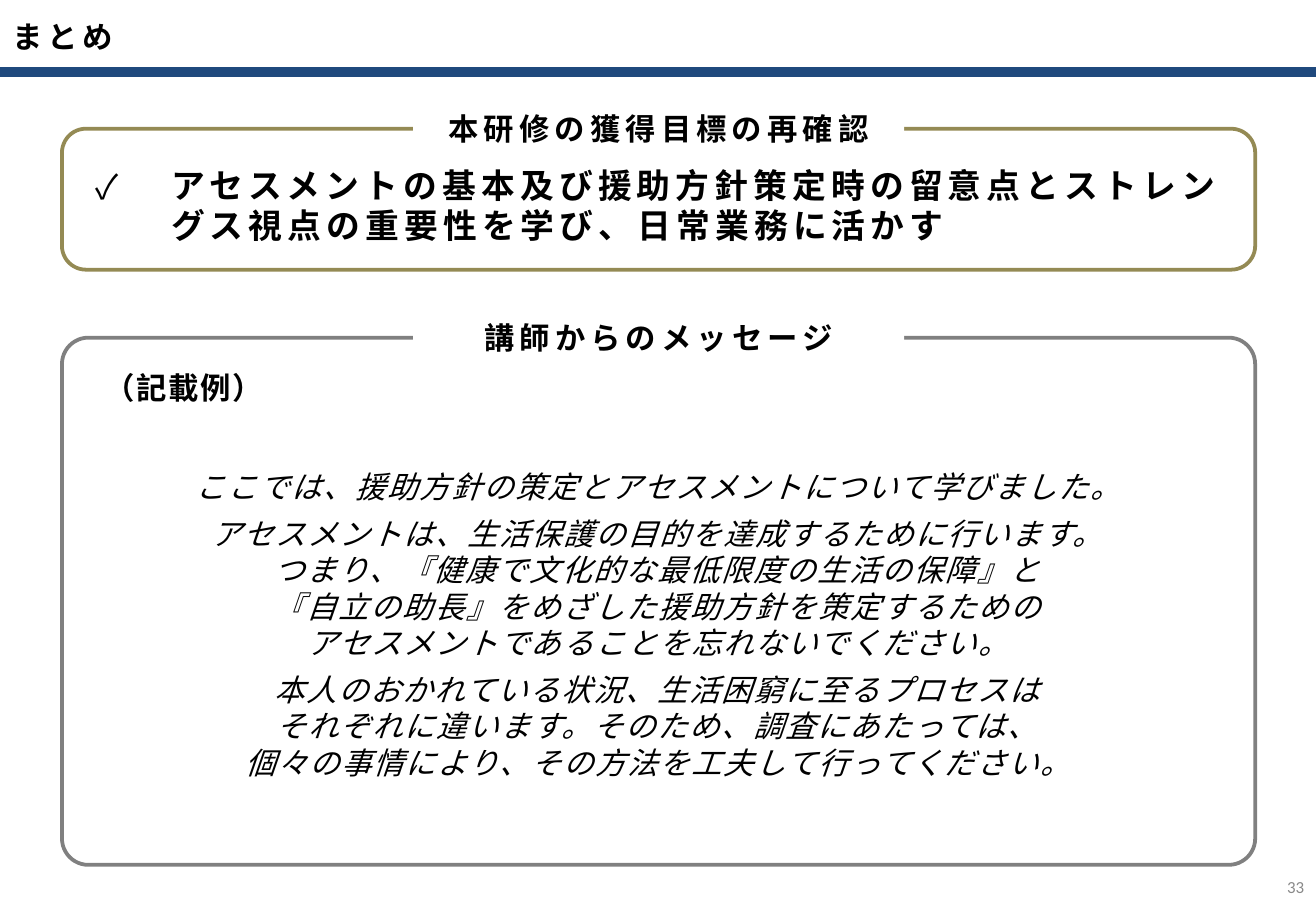
from lxml.etree import SubElement
from pptx import Presentation
from pptx.dml.color import RGBColor
from pptx.enum.shapes import MSO_CONNECTOR, MSO_SHAPE
from pptx.enum.text import MSO_ANCHOR, MSO_AUTO_SIZE, PP_ALIGN
from pptx.oxml.ns import qn
from pptx.util import Inches, Pt

WIDTH, HEIGHT = Inches(10.83), Inches(7.5)
FONT = "Noto Sans CJK JP"

BLACK = RGBColor(0x00, 0x00, 0x00)
WHITE = RGBColor(0xFF, 0xFF, 0xFF)
NAVY = RGBColor(0x1F, 0x49, 0x7D)
OLIVE = RGBColor(0x94, 0x8A, 0x54)
GRAY = RGBColor(0x80, 0x80, 0x80)
PAGE_GRAY = RGBColor(0x89, 0x89, 0x89)

# Panels, in percent of the slide
PANEL_X, PANEL_W = 4.71, 90.67
GOAL_Y, GOAL_H = 14.13, 15.47
MESSAGE_Y, MESSAGE_H = 37.07, 57.87
LABEL_X, LABEL_W, LABEL_H = 31.4, 37.3, 5.33

GOAL = "アセスメントの基本及び援助方針策定時の留意点とストレングス視点の重要性を学び、日常業務に活かす"
MESSAGE = [
    "ここでは、援助方針の策定とアセスメントについて学びました。",
    "アセスメントは、生活保護の目的を達成するために行います。\n"
    "つまり、『健康で文化的な最低限度の生活の保障』と\n"
    "『自立の助長』をめざした援助方針を策定するための\n"
    "アセスメントであることを忘れないでください。",
    "本人のおかれている状況、生活困窮に至るプロセスは\n"
    "それぞれに違います。そのため、調査にあたっては、\n"
    "個々の事情により、その方法を工夫して行ってください。",
]


def area(x, y, w, h):
    """Turn percentages of the slide into lengths."""
    return (int(WIDTH * x / 100), int(HEIGHT * y / 100),
            int(WIDTH * w / 100), int(HEIGHT * h / 100))


def add_bullet(p, char, indent):
    pPr = p._p.get_or_add_pPr()
    pPr.set("marL", str(indent))
    pPr.set("indent", str(-indent))
    SubElement(pPr, qn("a:buFont")).set("typeface", FONT)
    SubElement(pPr, qn("a:buChar")).set("char", char)


def write(sp, paragraphs, size=18, font=FONT, color=BLACK, bold=False,
          italic=False, spacing=3, align=PP_ALIGN.CENTER,
          anchor=MSO_ANCHOR.MIDDLE, leading=1.2, before=0, bullet=None):
    """Fill a shape with paragraphs of one format."""
    tf = sp.text_frame
    tf.word_wrap = True
    tf.auto_size = MSO_AUTO_SIZE.NONE
    tf.vertical_anchor = anchor
    for i, text in enumerate(paragraphs):
        p = tf.add_paragraph() if i else tf.paragraphs[0]
        p.alignment = align
        p.line_spacing = Pt(size * leading)
        p.space_before = Pt(before)
        if bullet:
            add_bullet(p, bullet, Inches(0.62))
        for j, line in enumerate(text.split("\n")):
            if j:
                p.add_line_break()
            r = p.add_run()
            r.text = line
            r.font.size, r.font.name = Pt(size), font
            r.font.bold, r.font.italic = bold, italic
            r.font.color.rgb = color
            rPr = r._r.get_or_add_rPr()
            rPr.set("spc", str(spacing * 100))
            SubElement(rPr, qn("a:ea")).set("typeface", font)


def add_text(s, box, paragraphs, **fmt):
    sp = s.shapes.add_textbox(*area(*box))
    write(sp, paragraphs, **fmt)
    return sp


def add_panel(s, y, h, color, label, corner):
    """Rounded frame with a label that interrupts its top edge."""
    sp = s.shapes.add_shape(MSO_SHAPE.ROUNDED_RECTANGLE,
                            *area(PANEL_X, y, PANEL_W, h))
    sp.shadow.inherit = False
    sp.adjustments[0] = corner
    sp.fill.background()
    sp.line.color.rgb, sp.line.width = color, Pt(2.25)

    tag = s.shapes.add_shape(
        MSO_SHAPE.RECTANGLE,
        *area(LABEL_X, y - LABEL_H / 2, LABEL_W, LABEL_H))
    tag.shadow.inherit = False
    tag.fill.solid()
    tag.fill.fore_color.rgb = WHITE
    tag.line.fill.background()
    write(tag, [label], bold=True, anchor=MSO_ANCHOR.TOP)


def add_title(s, text):
    sp = s.shapes.title
    sp.left, sp.top, sp.width, sp.height = area(0, 0, 83.75, 8)
    write(sp, [text], bold=True, align=PP_ALIGN.LEFT)
    x, y, w, _ = area(0, 7.87, 100, 0)
    rule = s.shapes.add_connector(MSO_CONNECTOR.STRAIGHT, x, y, x + w, y)
    rule.line.color.rgb, rule.line.width = NAVY, Pt(6)
    SubElement(rule._element.spPr, qn("a:effectLst"))


def main():
    prs = Presentation()
    prs.slide_width, prs.slide_height = WIDTH, HEIGHT
    s = prs.slides.add_slide(prs.slide_layouts[5])

    # Heading
    add_title(s, "まとめ")

    # Goal of the training
    add_panel(s, GOAL_Y, GOAL_H, OLIVE, "本研修の獲得目標の再確認", 0.17)
    add_text(s, (6.37, 17.73, 87.35, 9.6), [GOAL], size=20, bold=True,
             align=PP_ALIGN.LEFT, leading=1.17, bullet="✓")

    # Message from the lecturer
    add_panel(s, MESSAGE_Y, MESSAGE_H, GRAY, "講師からのメッセージ", 0.05)
    add_text(s, (6.65, 39.87, 14.59, 5.33), ["（記載例）"], bold=True,
             spacing=1, anchor=MSO_ANCHOR.TOP)
    sp = add_text(s, (6.19, MESSAGE_Y, 87.72, MESSAGE_H), MESSAGE,
                  italic=True, spacing=1, before=6)
    sp.text_frame.margin_top = Inches(0.43)

    # Page number
    add_text(s, (96.21, 94.67, 3.79, 5.33), ["33"], size=10, font="Calibri",
             color=PAGE_GRAY, spacing=0, align=PP_ALIGN.RIGHT)

    prs.save("out.pptx")


if __name__ == "__main__":
    main()
